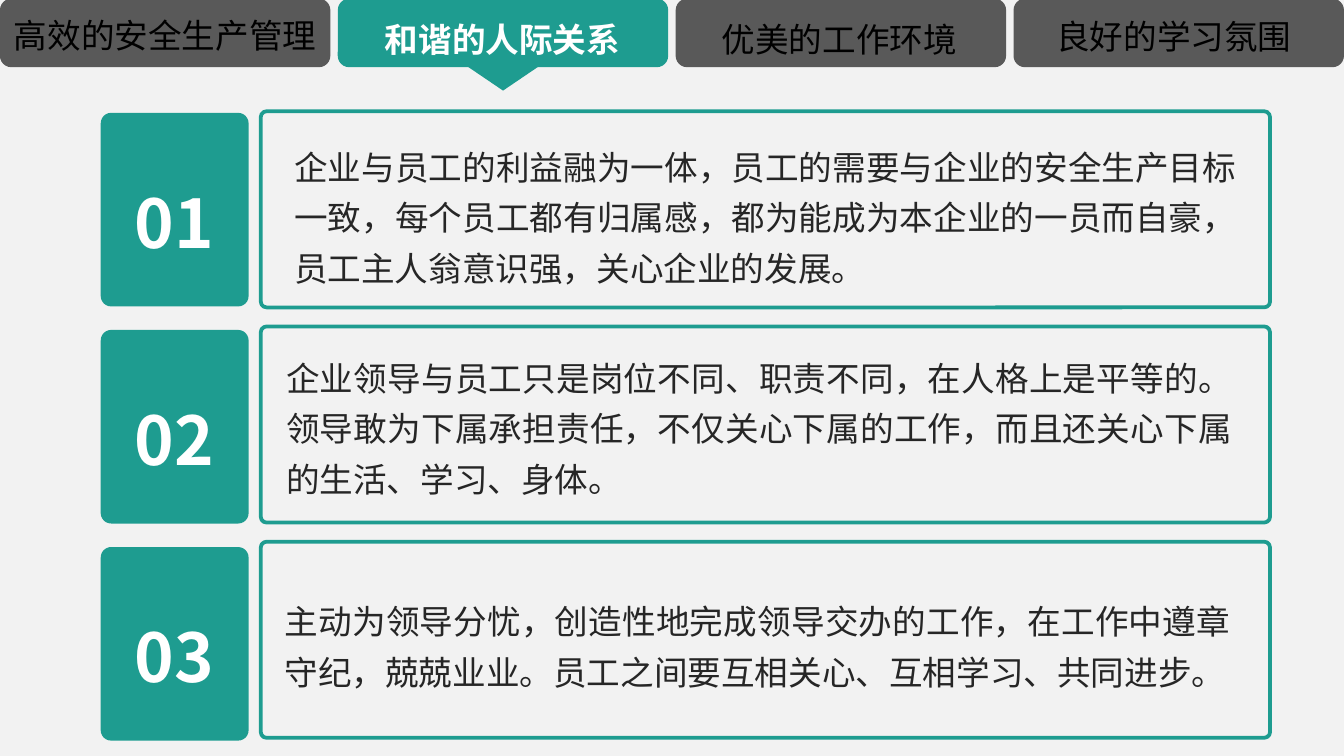
from lxml import etree
from pptx import Presentation
from pptx.dml.color import RGBColor
from pptx.enum import shapes, text
from pptx.oxml.ns import qn
from pptx.util import Pt

# Text boxes are (left, top, width, height) in points.
TABS = [
    ("高效的安全生产管理", (-2.2, 0, 181.4, 31)),
    ("和谐的人际关系", (192.2, 2.2, 154.1, 31)),
    ("优美的工作环境", (375.8, 2.2, 147.6, 31)),
    ("良好的学习氛围", (540.7, 0.7, 176.4, 33.1)),
]
ACTIVE_TAB = 1
POINTS = [
    ("企业与员工的利益融为一体，员工的需要与企业的安全生产目标一致，每个员工都有归属感，"
     "都为能成为本企业的一员而自豪，员工主人翁意识强，关心企业的发展。",
     (150.5, 69.8, 519.2, 89.3)),
    ("企业领导与员工只是岗位不同、职责不同，在人格上是平等的。领导敢为下属承担责任，"
     "不仅关心下属的工作，而且还关心下属的生活、学习、身体。",
     (146.2, 182.9, 521.3, 89.3)),
    ("主动为领导分忧，创造性地完成领导交办的工作，在工作中遵章守纪，兢兢业业。"
     "员工之间要互相关心、互相学习、共同进步。",
     (145.4, 313.2, 521.3, 59)),
]

THEME = {
    "font": "Noto Sans CJK SC",
    "page": "F2F2F2", "accent": "1E9C90", "idle": "595959",
    "white": "FFFFFF", "black": "000000", "body": "262626",
    "text_size": 18, "number_size": 36, "frame_line": 2,
}
TAB_STYLE = {"size": THEME["text_size"], "color": THEME["black"], "bold": False,
             "align": text.PP_ALIGN.CENTER, "spacing": 1.2}
TITLE_STYLE = {**TAB_STYLE, "color": THEME["white"], "bold": True}
NUMBER_STYLE = {**TITLE_STYLE, "size": THEME["number_size"]}
BODY_STYLE = {**TAB_STYLE, "color": THEME["body"],
              "align": text.PP_ALIGN.JUSTIFY, "spacing": 1.25}

PAGE_WIDTH, PAGE_HEIGHT = 720, 405
TAB_WIDTH, TAB_HEIGHT, TAB_TOP = 177, 36.7, -0.7
TAB_PITCH = (PAGE_WIDTH - TAB_WIDTH) / (len(TABS) - 1)
ARROW_LENGTH, ARROW_SPAN, ARROW_MIDDLE = 25.9, 38.2, 35.6
BADGE_TOP, BADGE_PITCH = 60.5, 116.3
FRAME_TOP, FRAME_PITCH = 59.6, 115.3
ROUNDED = shapes.MSO_SHAPE.ROUNDED_RECTANGLE


def place(item, frame):
    for name, value in zip(("left", "top", "width", "height"), frame):
        setattr(item, name, Pt(value))


def add_block(page, kind, frame, fill=None, line=None, corner=None):
    block = page.shapes.add_shape(kind, *(Pt(value) for value in frame))
    block.shadow.inherit = False
    if corner is not None:
        block.adjustments[0] = corner
    if fill:
        block.fill.solid()
        block.fill.fore_color.rgb = RGBColor.from_string(fill)
    else:
        block.fill.background()
    if line:
        block.line.color.rgb = RGBColor.from_string(line)
        block.line.width = Pt(THEME["frame_line"])
    else:
        block.line.fill.background()
    return block


def write(box, words, style):
    frame_format = {"word_wrap": True, "vertical_anchor": text.MSO_ANCHOR.TOP,
                    "auto_size": text.MSO_AUTO_SIZE.SHAPE_TO_FIT_TEXT}
    for name, value in frame_format.items():
        setattr(box.text_frame, name, value)
    para = box.text_frame.paragraphs[0]
    para.alignment, para.line_spacing = style["align"], style["spacing"]
    span = para.add_run()
    span.text = words
    font_format = {"name": THEME["font"], "size": Pt(style["size"]), "bold": style["bold"]}
    for name, value in font_format.items():
        setattr(span.font, name, value)
    span.font.color.rgb = RGBColor.from_string(style["color"])
    east_asian = etree.SubElement(span.font._element, qn("a:ea"))
    east_asian.set("typeface", THEME["font"])


def add_text(page, words, frame, style):
    box = page.shapes.add_textbox(*(Pt(value) for value in frame))
    write(box, words, style)


def add_tabs(page):
    middle = ACTIVE_TAB * TAB_PITCH + TAB_WIDTH / 2
    arrow = add_block(page, shapes.MSO_SHAPE.NOTCHED_RIGHT_ARROW,
                      (middle - ARROW_LENGTH / 2, ARROW_MIDDLE - ARROW_SPAN / 2,
                       ARROW_LENGTH, ARROW_SPAN), fill=THEME["accent"])
    arrow.rotation = 90
    for index, (label, frame) in enumerate(TABS):
        active = index == ACTIVE_TAB
        add_block(page, ROUNDED, (index * TAB_PITCH, TAB_TOP, TAB_WIDTH, TAB_HEIGHT),
                  fill=THEME["accent" if active else "idle"])
        if active:
            title = page.shapes.title
            place(title, frame)
            write(title, label, TITLE_STYLE)
            # Bring the title in front of its tab.
            title.element.getparent().append(title.element)
        else:
            add_text(page, label, frame, TAB_STYLE)


def add_points(page):
    for index, (words, frame) in enumerate(POINTS):
        badge_top = BADGE_TOP + index * BADGE_PITCH
        frame_top = FRAME_TOP + index * FRAME_PITCH
        add_block(page, ROUNDED, (54, badge_top, 79.2, 103.7),
                  fill=THEME["accent"], corner=0.07)
        add_text(page, f"{index + 1:02}", (61.2, badge_top + 24.3, 64.1, 59.8), NUMBER_STYLE)
        add_text(page, words, frame, BODY_STYLE)
        add_block(page, ROUNDED, (139.7, frame_top, 540.7, 105.1),
                  line=THEME["accent"], corner=0.03)


def main():
    deck = Presentation()
    deck.slide_width, deck.slide_height = Pt(PAGE_WIDTH), Pt(PAGE_HEIGHT)
    page = deck.slides.add_slide(deck.slide_layouts.get_by_name("Title Only"))
    page.background.fill.solid()
    page.background.fill.fore_color.rgb = RGBColor.from_string(THEME["page"])
    add_tabs(page)
    add_points(page)
    deck.save("out.pptx")


if __name__ == "__main__":
    main()
